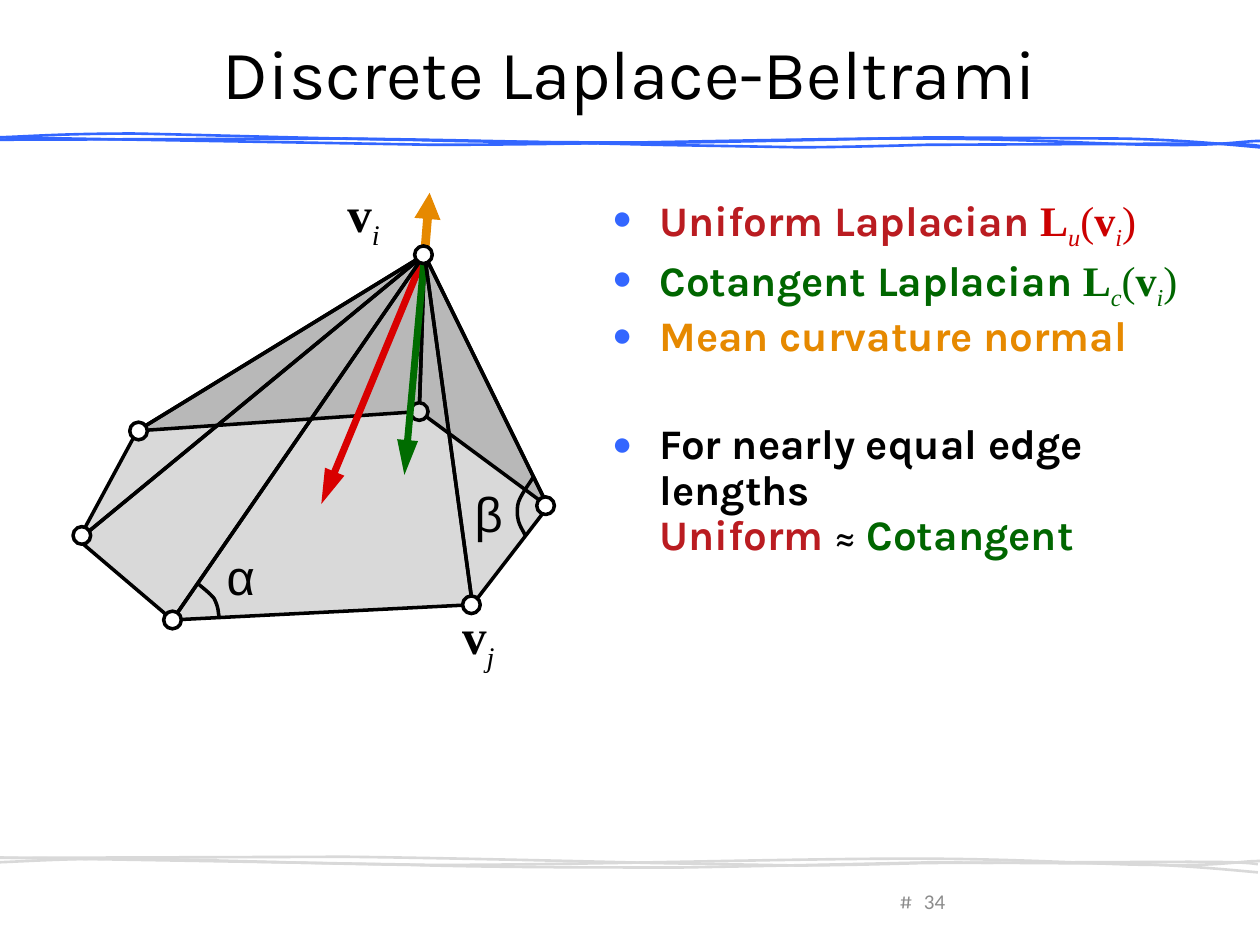
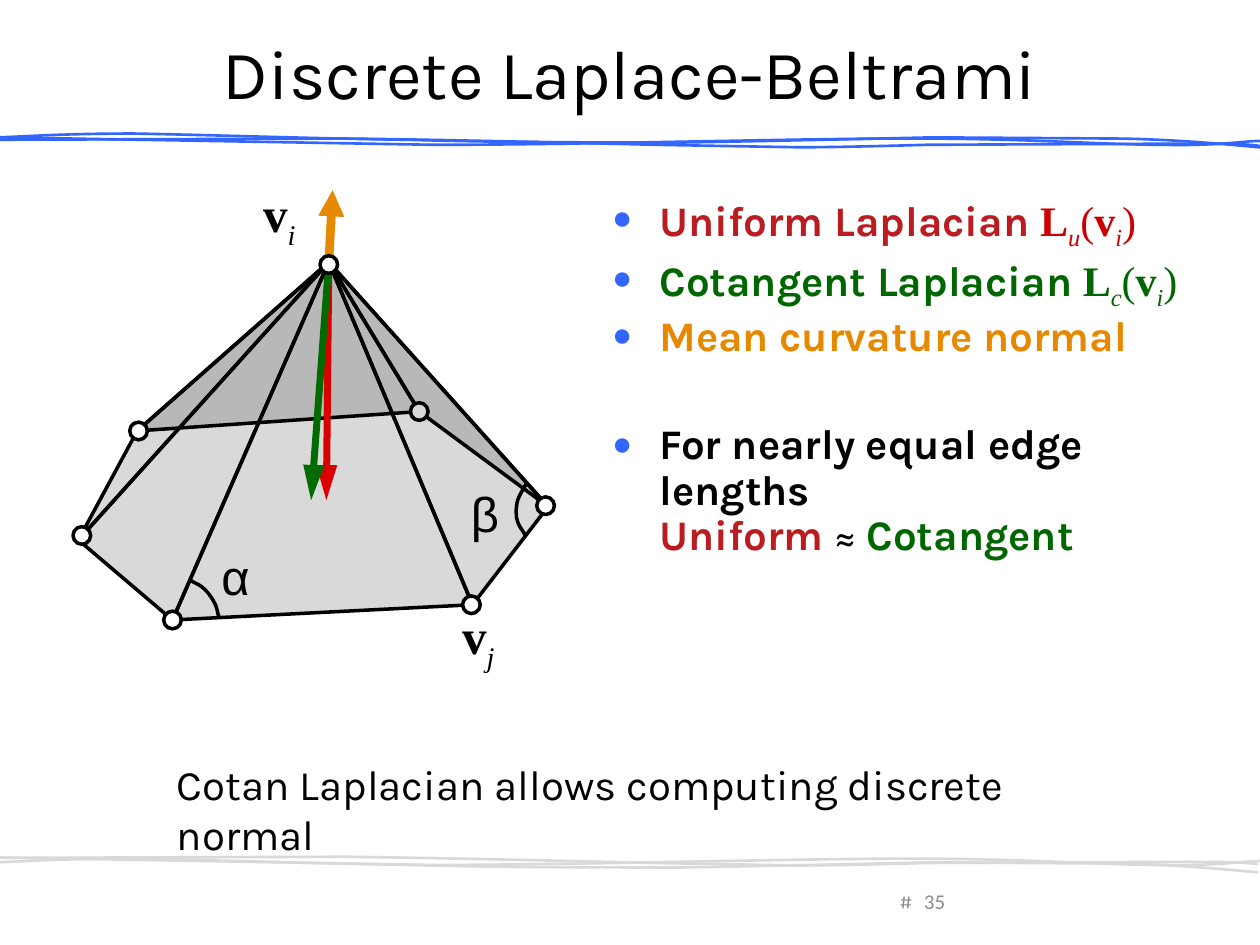
import pptx
import pptx.util
import pptx.dml.color
import pptx.enum.shapes
import pptx.enum.text
import pptx.oxml.ns
from dataclasses import dataclass
from lxml import etree

Pt = pptx.util.Pt
RGBColor = pptx.dml.color.RGBColor
ALIGN = pptx.enum.text.PP_ALIGN
ANCHOR = pptx.enum.text.MSO_ANCHOR
qn = pptx.oxml.ns.qn

BLACK = RGBColor(0x00, 0x00, 0x00)
WHITE = RGBColor(0xFF, 0xFF, 0xFF)
BLUE = RGBColor(0x33, 0x66, 0xFF)
PALE_GREY = RGBColor(0xD9, 0xD9, 0xD9)
GREY = RGBColor(0x8C, 0x8C, 0x8C)
ORANGE = RGBColor(0xE6, 0x89, 0x00)
CRIMSON = RGBColor(0xBA, 0x1C, 0x21)
FORMULA_RED = RGBColor(0xCC, 0x00, 0x00)
DARK_GREEN = RGBColor(0x00, 0x66, 0x00)
ARROW_RED = RGBColor(0xFF, 0x00, 0x00)
ARROW_GREEN = RGBColor(0x00, 0x80, 0x00)

SANS = "Karla"
SERIF = "Times New Roman"

# Outlines: a start point, then segments of one point (line) or three (Bezier curve)
HEADER_STRANDS = [
    [(-0.7, 78.5), [(247.7, 82.8)],
     [(334.8, 82.8), (451.4, 79.2), (520.6, 79.2)],
     [(589.7, 79.2), (630.7, 82.8), (663.8, 82.8)],
     [(697, 83.5), (710.6, 80.6), (720, 80.6)],
     [(729.4, 79.9), (724.3, 80.6), (719.3, 80.6)]],
    [(-0.7, 78.5), [(18.7, 77.8), (37.4, 76.3), (76.3, 76.3)],
     [(115.9, 77), (181.4, 79.2), (234, 79.9)],
     [(285.8, 81.4), (341.3, 81.4), (391, 81.4)],
     [(440.6, 80.6), (532.8, 78.5), (532.8, 78.5)], [(642.2, 79.2)],
     [(673.2, 79.9), (697, 82.1), (720, 84.2)]],
    [(-1.4, 79.9), [(198, 79.2)],
     [(260.6, 79.9), (374.4, 82.8), (374.4, 82.8)], [(456.5, 84.2)],
     [(482.4, 84.2), (529.2, 82.8), (529.2, 82.8)], [(679, 82.1)],
     [(710.6, 82.1), (715.7, 82.8), (720, 83.5)]],
]
FOOTER_DROPS = [411.5, 414.3, 410.4]

# Rim of the mesh; every face joins two neighbours on it to the apex
RIM = {
    "back": (239.6, 235.2), "left back": (78.5, 246.2), "left": (44.8, 308.6),
    "front left": (98.6, 354.3), "front right": (270, 345.6), "right": (313.2, 289.5),
}
DOTS = {**RIM, "left back": (79.2, 246.3), "left": (46.8, 306), "right": (311.8, 289),
        "front right": (269.4, 345.6)}


@dataclass
class Span:
    text: str
    color: RGBColor = BLACK
    font: str = SANS
    bold: bool = False
    sub: bool = False


@dataclass
class Mesh:
    apex: tuple
    apex_dot: tuple
    normal_tip: tuple
    uniform_tip: tuple
    cotangent_tip: tuple
    alpha_arc: list
    beta_arc: list
    apex_label: tuple
    alpha_label: tuple
    beta_label: tuple


STRETCHED = Mesh(
    apex=(242.6, 145.6), apex_dot=(242, 145.6), normal_tip=(245.5, 110.2),
    uniform_tip=(183.6, 288), cotangent_tip=(231.1, 271.4),
    alpha_arc=[(113, 333.4), [(114.5, 334.8), (120.2, 339.1), (122.4, 342)],
               [(125.3, 347.8), (124.6, 350.6), (125.3, 352.8)]],
    beta_arc=[(304.6, 272.9), [(303.1, 275.8), (296.6, 283.7), (295.9, 288.7)],
              [(294.5, 298.8), (298.8, 302.4), (300.2, 306)]],
    apex_label=(191.5, 101.5), alpha_label=(122.4, 308.9), beta_label=(264.2, 272.9))
BALANCED = Mesh(
    apex=(187.9, 149.8), apex_dot=(187.9, 151.2), normal_tip=(190.1, 108.7),
    uniform_tip=(186.5, 285.8), cotangent_tip=(177.8, 285.8),
    alpha_arc=[(109.4, 331.9), [(110.9, 333.4), (115.2, 333.4), (120.2, 340.6)],
               [(125.3, 347.8), (123.8, 350.6), (125.3, 352.8)]],
    beta_arc=[(301, 275.8), [(300.2, 277.9), (295.2, 284.4), (295.2, 289.4)],
              [(293.8, 299.5), (298.8, 302.4), (300.2, 306)]],
    apex_label=(143.3, 101.5), alpha_label=(119.5, 308.9), beta_label=(262, 272.9))


def add_xml(parent, tag, **attributes):
    return etree.SubElement(parent, qn(tag), attributes)


# Outlines and lines
def join_curves(shape, segments):
    """Turn each run of three line points that forms a curve into one Bezier segment."""
    lines = iter(shape._element.findall(".//" + qn("a:lnTo")))
    for segment in segments:
        first, *others = [next(lines) for _ in segment]
        if others:
            first.tag = qn("a:cubicBezTo")
            for line in others:
                first.append(line[0])
                line.getparent().remove(line)


def add_outline(page, outline, color, width, closed=False, dx=0, dy=0):
    start, *segments = outline
    points = [(Pt(x + dx), Pt(y + dy)) for x, y in [start, *sum(segments, [])]]
    builder = page.shapes.build_freeform(*points[0], scale=1.0)
    builder.add_line_segments(points[1:], close=closed)
    shape = builder.convert_to_shape()
    join_curves(shape, segments)
    shape.shadow.inherit = False
    shape.fill.background()
    shape.line.color.rgb = color
    shape.line.width = Pt(width)
    return shape


def add_face(page, apex, first, second):
    face = add_outline(page, [RIM[first], [RIM[second]], [apex]], BLACK, 2, closed=True)
    face.fill.solid()
    face.fill.fore_color.rgb = BLACK
    color = face._element.spPr.find(qn("a:solidFill"))[0]
    add_xml(color, "a:alpha", val="15000")


def add_dot(page, center, size=10.1):
    left, top = (Pt(value - size / 2) for value in center)
    dot = page.shapes.add_shape(pptx.enum.shapes.MSO_SHAPE.OVAL, left, top, Pt(size), Pt(size))
    dot.shadow.inherit = False
    dot.fill.solid()
    dot.fill.fore_color.rgb = WHITE
    dot.line.color.rgb = BLACK
    dot.line.width = Pt(2)


def add_arrow(page, start, tip, color, width, head_length):
    arrow = page.shapes.add_connector(pptx.enum.shapes.MSO_CONNECTOR.STRAIGHT,
                                      *(Pt(value) for value in start + tip))
    arrow.line.color.rgb = color
    arrow.line.width = Pt(width)
    add_xml(arrow.line._get_or_add_ln(), "a:tailEnd", type="triangle", len=head_length)
    add_xml(arrow._element.spPr, "a:effectLst")


# Text
def add_box(page, left, top, width, height, anchor=ANCHOR.TOP):
    box = page.shapes.add_textbox(Pt(left), Pt(top), Pt(width), Pt(height))
    box.text_frame.word_wrap = True
    box.text_frame.vertical_anchor = anchor
    return box


def set_font(font, name, size, color):
    font.name = name
    font.size = Pt(size)
    font.color.rgb = color


def add_text(page, text, bounds, name, size, color=BLACK, align=ALIGN.LEFT, anchor=ANCHOR.TOP):
    box = add_box(page, *bounds, anchor=anchor)
    para = box.text_frame.paragraphs[0]
    para.text = text
    para.alignment = align
    set_font(para.font, name, size, color)
    return box


def add_spans(para, spans):
    for span in spans:
        if span.text == "\n":
            para.add_line_break()
            continue
        run = para.add_run()
        run.text = span.text
        run.font.name = span.font
        run.font.color.rgb = span.color
        run.font.bold = span.bold
        run.font.italic = span.sub
        if span.sub:
            run._r.get_or_add_rPr().set("baseline", "-25000")


def indexed(letter, index, color=BLACK):
    return [Span(letter, color, SERIF, bold=True), Span(index, color, SERIF, sub=True)]


def laplacian(index, color):
    return [*indexed("L", index, color), Span("(", color, SERIF),
            *indexed("v", "i", color), Span(")", color, SERIF)]


def add_vertex_label(page, position, index):
    para = add_box(page, *position, 38.9, 41).text_frame.paragraphs[0]
    para.font.size = Pt(28)
    add_spans(para, indexed("v", index))


def add_bullets(page, items):
    frame = add_box(page, 342.7, 108, 366.5, 360).text_frame
    for number, (space_before, spans) in enumerate(items):
        para = frame.add_paragraph() if number else frame.paragraphs[0]
        para.line_spacing = 0.9
        para.space_before = Pt(space_before)
        properties = para._p.get_or_add_pPr()
        properties.set("marL", str(Pt(27)))
        properties.set("indent", str(Pt(-27)))
        add_xml(add_xml(properties, "a:buClr"), "a:srgbClr", val=str(BLUE))
        add_xml(properties, "a:buSzPct", val="80000")
        add_xml(properties, "a:buFont", typeface="Arial")
        add_xml(properties, "a:buChar", char="●")
        para.font.size = Pt(24)
        add_spans(para, spans)


# Parts of the slides
def add_shared_parts(page):
    """Draw the bands and the number mark, and hand them to the layout."""
    parts = []
    for strand, drop in zip(HEADER_STRANDS, FOOTER_DROPS):
        parts.append(add_outline(page, strand, BLUE, 1.5))
        parts.append(add_outline(page, strand, PALE_GREY, 1.5, dx=-1.2, dy=drop))
    mark = add_text(page, "#", (506.9, 504, 21.6, 21.6), SANS, 12, GREY, ALIGN.CENTER, ANCHOR.MIDDLE)
    mark.text_frame.margin_left = mark.text_frame.margin_right = 0
    for number, part in enumerate([*parts, mark], start=100):
        part._element.nvSpPr.cNvPr.set("id", str(number))
        page.slide_layout.shapes._spTree.append(part._element)


def add_page(deck, title, number):
    page = deck.slides.add_slide(deck.slide_layouts[5])
    heading = page.shapes.title
    heading.left, heading.top, heading.width, heading.height = Pt(36), Pt(21.6), Pt(648), Pt(38.8)
    heading.text_frame.text = title
    heading.text_frame.vertical_anchor = ANCHOR.MIDDLE
    para = heading.text_frame.paragraphs[0]
    para.alignment = ALIGN.CENTER
    set_font(para.font, SANS, 39.6, BLACK)
    add_text(page, str(number), (500.4, 500.4, 46.8, 28.8), "Calibri", 12, GREY,
             ALIGN.RIGHT, ANCHOR.MIDDLE)
    return page


def add_mesh(page, mesh):
    # Rear faces
    add_face(page, mesh.apex, "left back", "back")
    add_face(page, mesh.apex, "right", "back")
    add_dot(page, DOTS["back"])
    add_face(page, mesh.apex, "front left", "left")
    add_face(page, mesh.apex, "left", "left back")
    for name in ("left", "left back"):
        add_dot(page, DOTS[name])
    # Angles and vectors
    for arc in (mesh.alpha_arc, mesh.beta_arc):
        add_outline(page, arc, BLACK, 2)
    add_arrow(page, mesh.apex, mesh.uniform_tip, ARROW_RED, 4, "lg")
    add_arrow(page, mesh.apex, mesh.cotangent_tip, ARROW_GREEN, 4, "lg")
    add_arrow(page, mesh.apex, mesh.normal_tip, ORANGE, 5, "med")
    # Front faces
    add_face(page, mesh.apex, "front left", "front right")
    add_face(page, mesh.apex, "front right", "right")
    for center in (DOTS["right"], DOTS["front right"], DOTS["front left"], mesh.apex_dot):
        add_dot(page, center)
    # Labels
    add_vertex_label(page, mesh.apex_label, "i")
    add_vertex_label(page, (257, 342.7), "j")
    for text, position in (("α", mesh.alpha_label), ("β", mesh.beta_label)):
        add_text(page, text, (*position, 38.9, 41), "Arial", 28)


def main():
    deck = pptx.Presentation()
    deck.slide_width, deck.slide_height = Pt(720), Pt(540)
    bullets = [
        (0, [Span("Uniform Laplacian ", CRIMSON, bold=True), *laplacian("u", FORMULA_RED)]),
        (4.8, [Span("Cotangent Laplacian ", DARK_GREEN, bold=True), *laplacian("c", DARK_GREEN)]),
        (4.8, [Span("Mean curvature normal", ORANGE, bold=True)]),
        (36, [Span("For nearly equal edge lengths", bold=True), Span("\n"),
              Span("Uniform ", CRIMSON, bold=True), Span("≈ "),
              Span("Cotangent", DARK_GREEN, bold=True)]),
    ]
    for number, mesh in enumerate((STRETCHED, BALANCED), start=34):
        page = add_page(deck, "Discrete Laplace-Beltrami", number)
        add_mesh(page, mesh)
        add_bullets(page, bullets)
    add_text(page, "Cotan Laplacian allows computing discrete normal",
             (94, 429.8, 562.3, 36), SANS, 24)
    add_shared_parts(page)
    deck.save("out.pptx")


if __name__ == "__main__":
    main()
